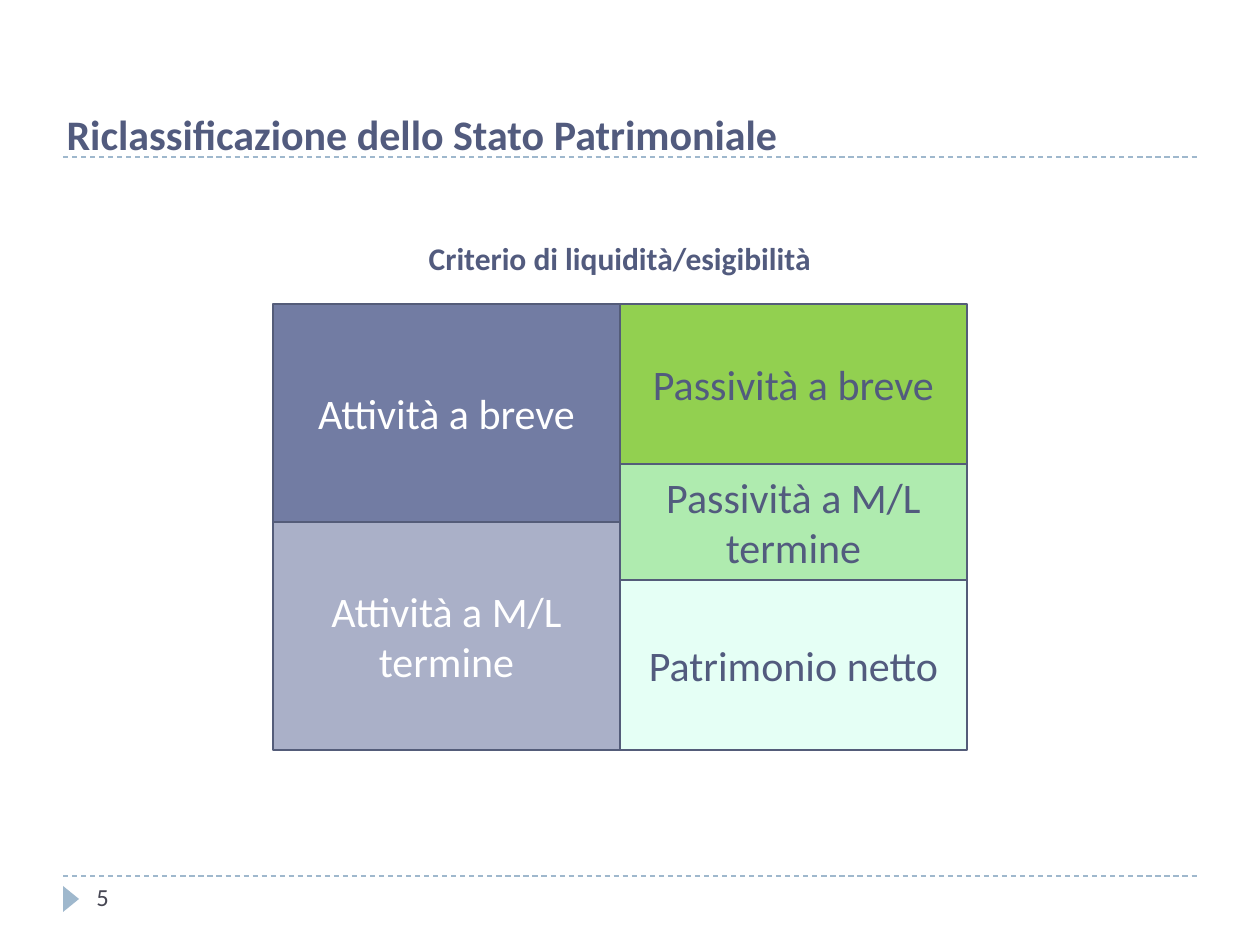
from dataclasses import dataclass

from lxml.etree import SubElement
from pptx import Presentation
from pptx.dml.color import RGBColor
from pptx.enum.dml import MSO_LINE_DASH_STYLE as Dash
from pptx.enum.shapes import MSO_CONNECTOR as Connector, MSO_SHAPE as Shape
from pptx.enum.text import MSO_ANCHOR as Anchor, MSO_AUTO_SIZE as AutoSize, PP_ALIGN as Align
from pptx.oxml.ns import qn
from pptx.util import Emu, Pt

PX_PER_INCH = 126
FONT = "Calibri"

INK = RGBColor(0x52, 0x5B, 0x7E)
GREY = RGBColor(0x46, 0x46, 0x53)
WHITE = RGBColor(0xFF, 0xFF, 0xFF)
ACCENT = RGBColor(0x9F, 0xB8, 0xCD)
OUTLINE = RGBColor(0x54, 0x5C, 0x79)
BLUE = RGBColor(0x72, 0x7C, 0xA3)
PALE_BLUE = RGBColor(0xAA, 0xB0, 0xC8)
GREEN = RGBColor(0x92, 0xD0, 0x50)
PALE_GREEN = RGBColor(0xAF, 0xEB, 0xAF)
MINT = RGBColor(0xE5, 0xFF, 0xF5)

BALANCE_LEFT, BALANCE_TOP, COLUMN_WIDTH = 273, 304, 347


@dataclass(frozen=True)
class Block:
    label: str
    height: int
    fill: RGBColor


ASSETS = [
    Block("Attività a breve", 218, BLUE),
    Block("Attività a M/L termine", 228, PALE_BLUE),
]
LIABILITIES = [
    Block("Passività a breve", 160, GREEN),
    Block("Passività a M/L termine", 116, PALE_GREEN),
    Block("Patrimonio netto", 170, MINT),
]


def px(length: int) -> Emu:
    return Emu(round(length * 914400 / PX_PER_INCH))


def write(shape, text: str, *, size: int = 24, color: RGBColor = INK, bold: bool = False,
          align: Align = Align.LEFT, anchor: Anchor = Anchor.TOP) -> None:
    frame = shape.text_frame
    frame.word_wrap = True
    frame.auto_size = AutoSize.NONE
    frame.vertical_anchor = anchor
    para = frame.paragraphs[0]
    para.alignment = align
    span = para.add_run()
    span.text = text
    span.font.name = FONT
    span.font.size = Pt(size)
    span.font.bold = bold
    span.font.color.rgb = color


def add_text(page, left: int, top: int, width: int, height: int, text: str, **style) -> None:
    box = page.shapes.add_textbox(px(left), px(top), px(width), px(height))
    write(box, text, **style)


def add_rule(page, y: int) -> None:
    rule = page.shapes.add_connector(Connector.STRAIGHT, px(63), px(y), px(1197), px(y))
    rule.line.color.rgb = ACCENT
    rule.line.width = Pt(0.75)
    rule.line.dash_style = Dash.DASH
    SubElement(rule._element.spPr, qn("a:effectLst"))


def add_column(page, left: int, blocks: list[Block], text_color: RGBColor) -> None:
    top = BALANCE_TOP
    for block in blocks:
        box = page.shapes.add_shape(Shape.RECTANGLE, px(left), px(top),
                                    px(COLUMN_WIDTH), px(block.height))
        box.shadow.inherit = False
        box.fill.solid()
        box.fill.fore_color.rgb = block.fill
        box.line.color.rgb = OUTLINE
        box.line.width = Pt(1.5)
        write(box, block.label, color=text_color, align=Align.CENTER, anchor=Anchor.MIDDLE)
        top += block.height


def main() -> None:
    deck = Presentation()
    deck.slide_width, deck.slide_height = px(1260), px(945)
    page = deck.slides.add_slide(deck.slide_layouts[5])

    # Title between the dashed rules
    add_rule(page, 876)
    add_rule(page, 157)
    title = page.shapes.title
    title.left, title.top, title.width, title.height = px(54), px(102), px(1123), px(63)
    write(title, "Riclassificazione dello Stato Patrimoniale", bold=True)

    # Footer marker and page number
    marker = page.shapes.add_shape(Shape.ISOSCELES_TRIANGLE, px(58), px(891), px(26), px(16))
    marker.rotation = 90
    marker.shadow.inherit = False
    marker.fill.solid()
    marker.fill.fore_color.rgb = ACCENT
    marker.line.fill.background()
    add_text(page, 84, 876, 273, 50, "5", size=14, color=GREY)

    # Balance sheet: assets beside liabilities and equity
    add_column(page, BALANCE_LEFT, ASSETS, WHITE)
    add_column(page, BALANCE_LEFT + COLUMN_WIDTH, LIABILITIES, INK)
    add_text(page, 223, 233, 794, 50, "Criterio di liquidità/esigibilità",
             size=18, bold=True, align=Align.CENTER)

    deck.save("out.pptx")


if __name__ == "__main__":
    main()
